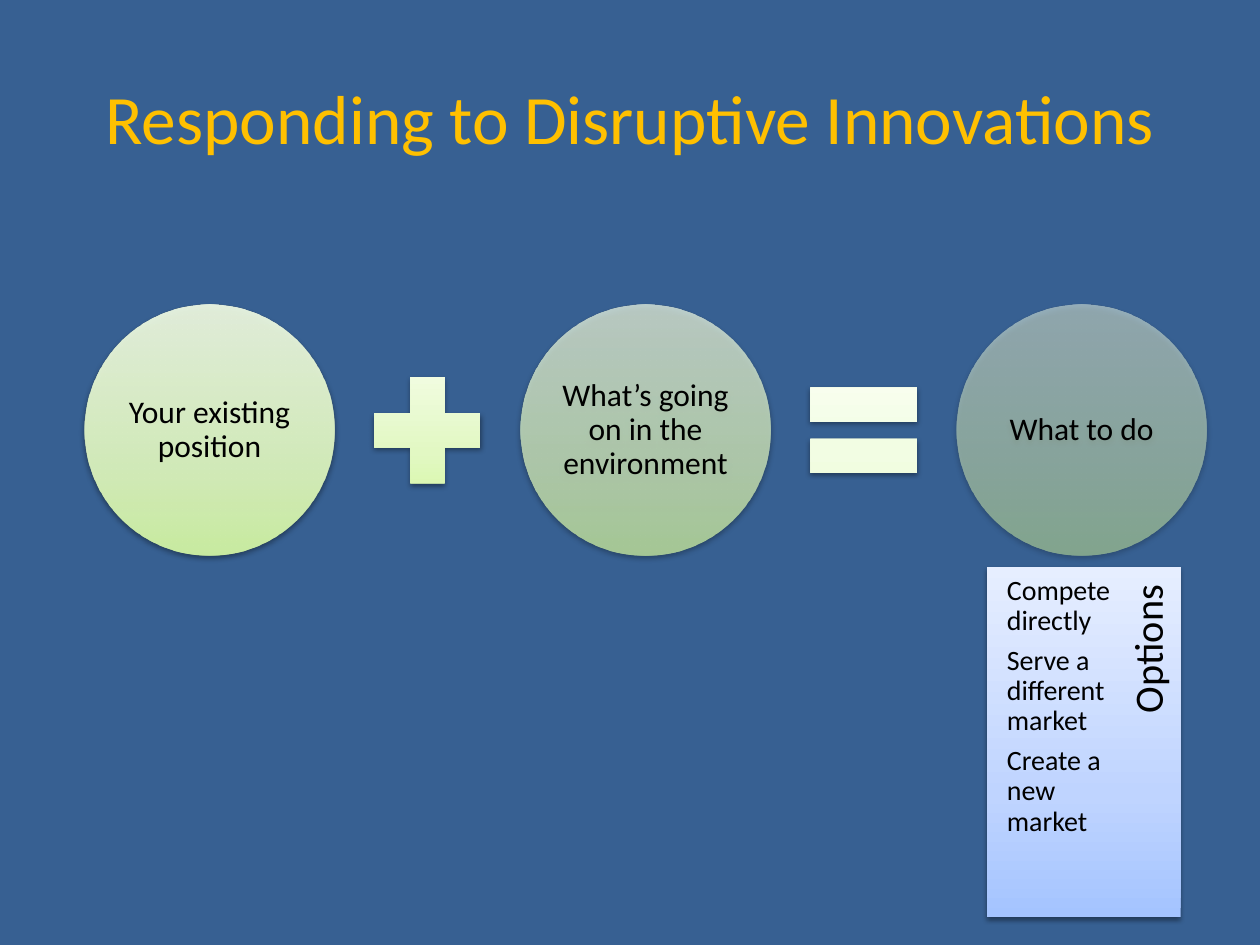
from lxml.etree import SubElement
from pptx import Presentation
from pptx.dml.color import RGBColor
from pptx.enum.shapes import MSO_SHAPE as SHAPE
from pptx.enum.text import MSO_ANCHOR as ANCHOR, MSO_AUTO_SIZE as AUTO, PP_ALIGN as ALIGN
from pptx.oxml.ns import qn
from pptx.util import Cm, Pt

COLORS = {"background": "376092", "title": "FFC000", "text": "000000", "shadow": "000000"}
# Gradients run from bottom to top
GRADIENTS = {
    "circle": ("DAFDA7", "E4FCC2", "F5FFE7"),
    "plus": ("D7F7A9", "E2F8C3", "F4FDE7"),
    "equal": ("EDFDD8", "F2FDE3", "FAFFF3"),
    "panel": ("A4C4FF", "BFD4FF", "E6EEFF"),
}
STOPS = (0, 35, 100)


def add_color(parent, color, alpha):
    clr = SubElement(parent, qn("a:srgbClr"), val=color)
    if alpha < 100:
        SubElement(clr, qn("a:alpha"), val=str(alpha * 1000))


class Deck:
    font = "Calibri"

    def __init__(self):
        self.prs = Presentation()
        self.prs.slide_width, self.prs.slide_height = Cm(25.4), Cm(19.05)

    def new_slide(self):
        self.s = self.prs.slides.add_slide(self.prs.slide_layouts[5])
        fill = self.s.background.fill
        fill.solid()
        fill.fore_color.rgb = RGBColor.from_string(COLORS["background"])

    def set_text(self, sp, lines, size, color="text", align=ALIGN.CENTER,
                 anchor=ANCHOR.MIDDLE, insets=(0.08,) * 4, spacing=0.9):
        tf = sp.text_frame
        left, top, right, bottom = map(Cm, insets)
        frame = {"word_wrap": True, "auto_size": AUTO.NONE, "vertical_anchor": anchor,
                 "margin_left": left, "margin_top": top,
                 "margin_right": right, "margin_bottom": bottom}
        for name, value in frame.items():
            setattr(tf, name, value)
        for i, line in enumerate(lines):
            p = tf.paragraphs[0] if i == 0 else tf.add_paragraph()
            p.alignment, p.line_spacing = align, spacing
            if i < len(lines) - 1:
                p.space_after = Pt(size * 0.35)
            r = p.add_run()
            r.text = line
            for name, value in {"name": self.font, "size": Pt(size)}.items():
                setattr(r.font, name, value)
            r.font.color.rgb = RGBColor.from_string(COLORS[color])

    def title(self, text, x, y, w, h):
        sp = self.s.shapes.title
        sp.left, sp.top, sp.width, sp.height = map(Cm, (x, y, w, h))
        self.set_text(sp, [text], 39.6, "title", insets=(0.25, 0.13, 0.25, 0.13), spacing=1.0)

    def shape(self, kind, gradient, x, y, w, h, alpha=100):
        sp = self.s.shapes.add_shape(kind, *map(Cm, (x, y, w, h)))
        sp.line.fill.background()
        sp.fill.gradient()
        sp.fill.gradient_angle = 90
        gs_list = sp._element.spPr.find(".//" + qn("a:gsLst"))
        for gs in list(gs_list):
            gs_list.remove(gs)
        for pos, color in zip(STOPS, GRADIENTS[gradient]):
            add_color(SubElement(gs_list, qn("a:gs"), pos=str(pos * 1000)), color, alpha)
        # Soft shadow straight below
        sp.shadow.inherit = False
        shadow = SubElement(sp._element.spPr.find(qn("a:effectLst")), qn("a:outerShdw"),
                            blurRad=str(Pt(3.1)), dist=str(Pt(1.6)),
                            dir="5400000", rotWithShape="0")
        add_color(shadow, COLORS["shadow"], 38)
        return sp

    def text(self, lines, x, y, w, h, size, rotation=0, **style):
        sp = self.s.shapes.add_textbox(*map(Cm, (x, y, w, h)))
        sp.rotation = rotation
        self.set_text(sp, lines, size, **style)


def main():
    deck = Deck()
    deck.new_slide()
    deck.title("Responding to Disruptive Innovations", 1.27, 0.76, 22.86, 3.18)

    # Equation: circles with a sign centred in each gap
    left, top, circle, step, sign = 1.7, 6.15, 5.05, 8.79, 2.92
    circles = [("Your existing position", 90),
               ("What’s going on in the environment", 70),
               ("What to do", 50)]
    for i, (label, alpha) in enumerate(circles):
        sp = deck.shape(SHAPE.OVAL, "circle", left + i * step, top, circle, circle, alpha)
        deck.set_text(sp, [label], 18)
    signs = [(SHAPE.MATH_PLUS, "plus"), (SHAPE.MATH_EQUAL, "equal")]
    for i, (kind, gradient) in enumerate(signs):
        x = left + i * step + (circle + step - sign) / 2
        deck.shape(kind, gradient, x, top + (circle - sign) / 2, sign, sign)

    # Options panel
    deck.shape(SHAPE.RECTANGLE, "panel", 19.89, 11.43, 3.91, 7.06)
    deck.text(["Options"], 20.45, 13.69, 5.54, 1.02, 23, rotation=270,
              align=ALIGN.RIGHT, insets=(0.25, 0, 0.36, 0.08))
    deck.text(["Compete directly", "Serve a different market", "Create a new market"],
              20.12, 11.43, 2.97, 7.11, 16,
              align=ALIGN.LEFT, anchor=ANCHOR.TOP, insets=(0.18,) * 4)

    deck.prs.save("out.pptx")


if __name__ == "__main__":
    main()
